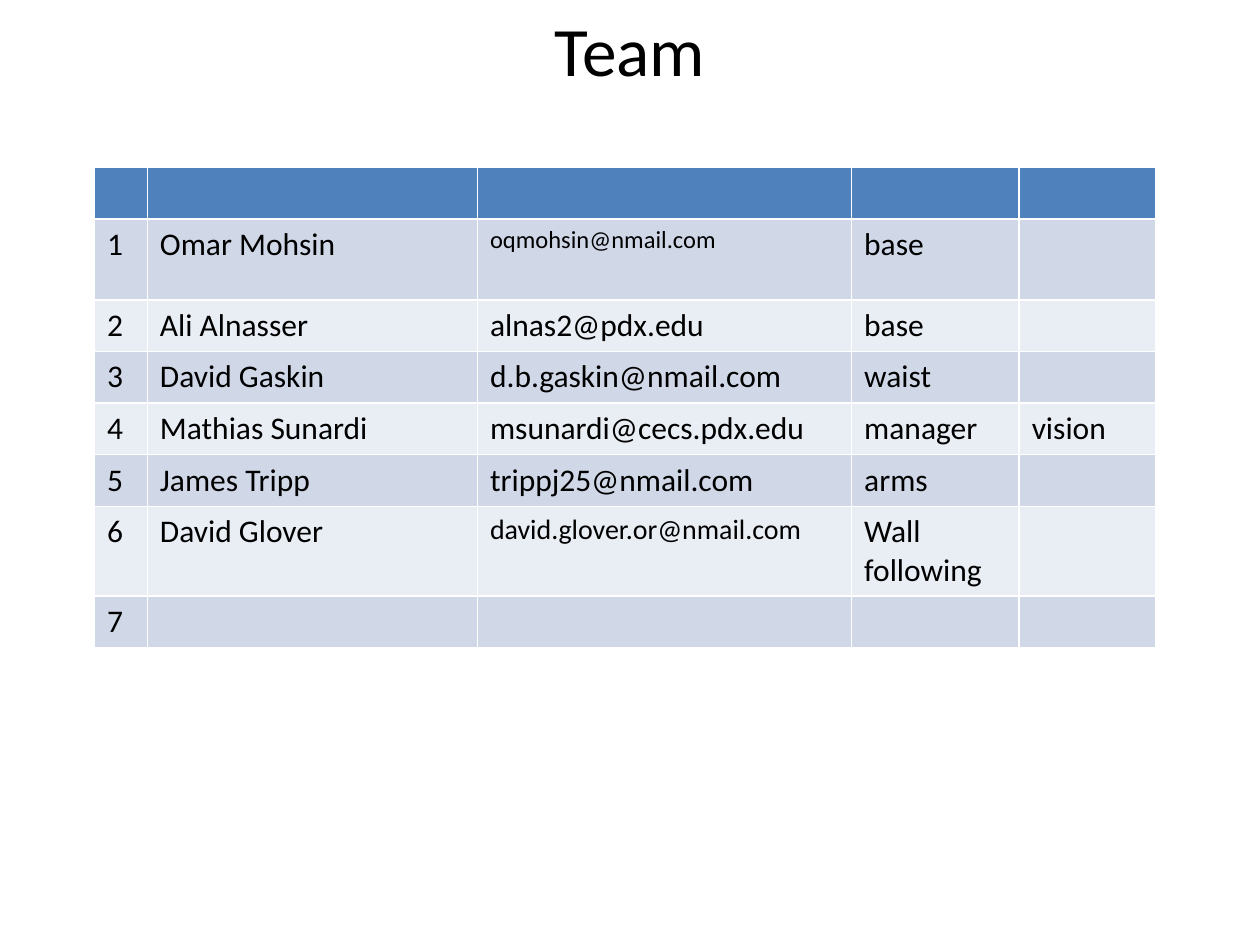
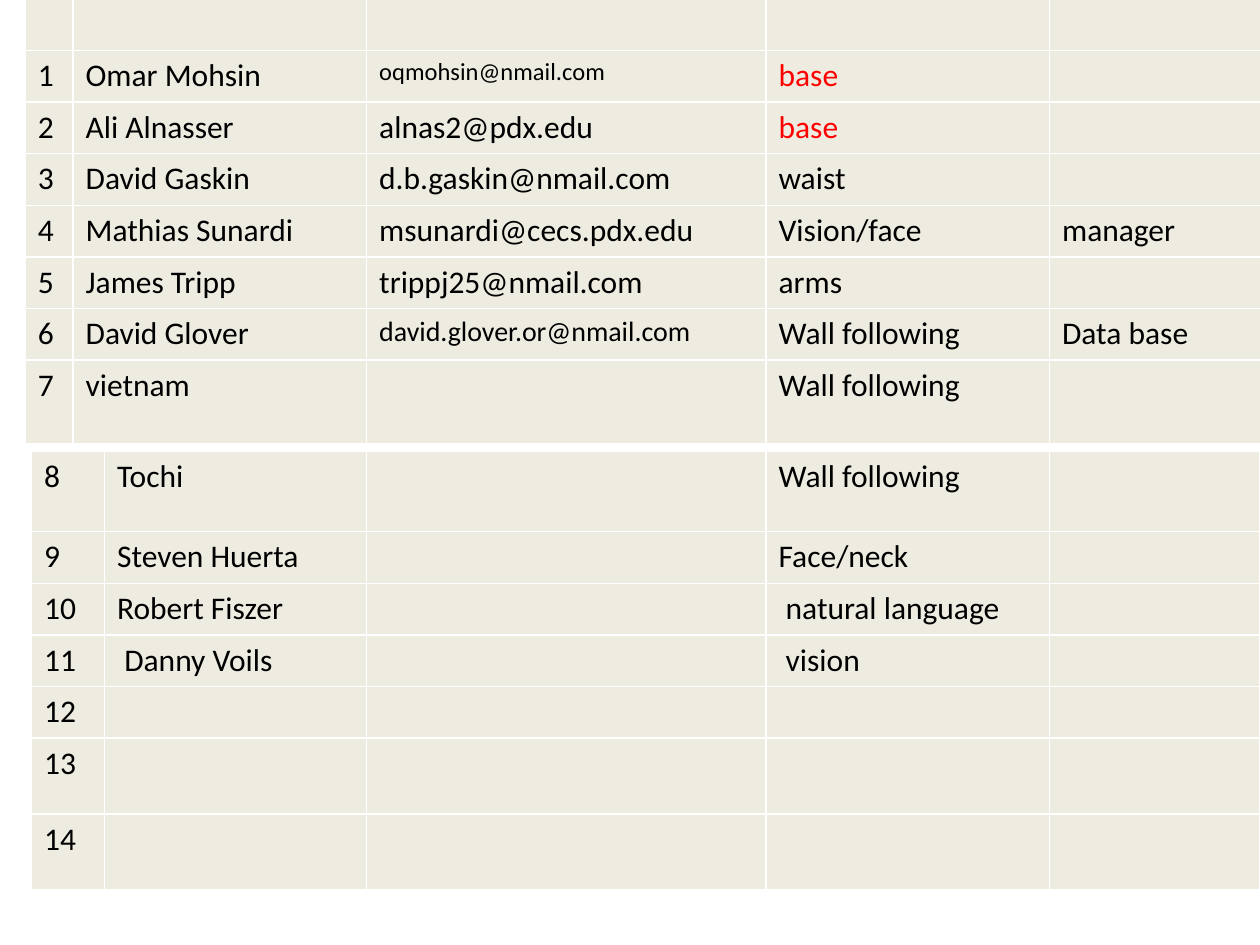
from pptx import Presentation
from pptx.dml.color import RGBColor
from pptx.enum.text import MSO_ANCHOR, PP_ALIGN
from pptx.oxml.ns import qn
from pptx.util import Inches, Pt
from lxml import etree

MIDDLE, CENTER = MSO_ANCHOR.MIDDLE, PP_ALIGN.CENTER
FONT = "Calibri"
BODY_SIZE = 18
BORDER_WIDTH = Pt(1)
COLORS = {
    "text": "000000", "accent": "FF0000", "border": "FFFFFF", "header": "4F81BD",
    "band_dark": "D0D8E8", "band_light": "E9EDF4", "sand": "EEECE1",
}
BLUE_FILLS = ["header"] + ["band_dark", "band_light"] * 3 + ["band_dark"]
EMAILS = {
    "omar": "oqmohsin@nmail.com",
    "ali": "alnas2@pdx.edu",
    "gaskin": "d.b.gaskin@nmail.com",
    "mathias": "msunardi@cecs.pdx.edu",
    "james": "trippj25@nmail.com",
    "glover": "david.glover.or@nmail.com",
}
EMAIL_SIZES = {EMAILS["omar"]: 14, EMAILS["glover"]: 16}
MEMBERS = [
    ("Omar Mohsin", EMAILS["omar"]),
    ("Ali Alnasser", EMAILS["ali"]),
    ("David Gaskin", EMAILS["gaskin"]),
    ("Mathias Sunardi", EMAILS["mathias"]),
    ("James Tripp", EMAILS["james"]),
    ("David Glover", EMAILS["glover"]),
]
FIRST_ROLES = [
    ("base", ""), ("base", ""), ("waist", ""), ("manager", "vision"),
    ("arms", ""), ("Wall following", ""), ("", ""),
]
UPDATED_ROLES = [
    ("base", ""), ("base", ""), ("waist", ""), ("Vision/face", "manager"),
    ("arms", ""), ("Wall following", "Data base"), ("Wall following", ""),
]
NEW_MEMBERS = [
    ("Tochi", "", "Wall following", ""),
    ("Steven Huerta", "", "Face/neck", ""),
    ("Robert Fiszer", "", " natural language", ""),
    (" Danny Voils", "", " vision", ""),
] + [("",) * 4] * 3


def rgb(name):
    """Return the named colour."""
    return RGBColor.from_string(COLORS[name])


def add_run(p, text, size, color="text"):
    """Add one styled run to a paragraph."""
    r = p.add_run()
    r.text = text
    r.font.name, r.font.size, r.font.bold = FONT, Pt(size), False
    r.font.color.rgb = rgb(color)


def add_title(s, text, x, y, w, h):
    """Add a centred slide title in the given box."""
    tf = s.shapes.add_textbox(Inches(x), Inches(y), Inches(w), Inches(h)).text_frame
    tf.word_wrap = True
    tf.vertical_anchor = MIDDLE
    p = tf.paragraphs[0]
    p.alignment = CENTER
    add_run(p, text, 39.6)


def style_cell(cell, fill):
    """Give a cell its white borders and its fill."""
    tc_pr = cell._tc.get_or_add_tcPr()
    for side in ("a:lnL", "a:lnR", "a:lnT", "a:lnB"):
        ln = etree.SubElement(tc_pr, qn(side), w=str(BORDER_WIDTH))
        solid = etree.SubElement(ln, qn("a:solidFill"))
        etree.SubElement(solid, qn("a:srgbClr"), val=COLORS["border"])
    cell.fill.solid()
    cell.fill.fore_color.rgb = rgb(fill)


def add_roster(s, x, y, widths, heights, rows, fills, accents=()):
    """Add a team table, with one fill per row and some words in the accent colour."""
    shape = s.shapes.add_table(len(rows), len(widths), Inches(x), Inches(y),
                               Inches(sum(widths)), Inches(sum(heights)))
    table = shape.table
    for column, width in zip(table.columns, widths):
        column.width = Inches(width)
    for row, height, texts, fill in zip(table.rows, heights, rows, fills):
        row.height = Inches(height)
        for cell, text in zip(row.cells, texts):
            style_cell(cell, fill)
            p = cell.text_frame.paragraphs[0]
            p.font.size = Pt(BODY_SIZE)
            if text:
                color = "accent" if text in accents else "text"
                add_run(p, text, EMAIL_SIZES.get(text, BODY_SIZE), color)


def numbered(people, start=1):
    """Put a running number before each row."""
    return [(str(i), *person) for i, person in enumerate(people, start)]


def with_roles(members, roles):
    """Return an empty header row and the numbered members with their roles."""
    people = [member + role for member, role in zip(members, roles)]
    return [("",) * 5] + numbered(people)


def build_team_slide(prs):
    """Build the titled slide with the first team table."""
    s = prs.slides.add_slide(prs.slide_layouts[6])
    add_title(s, "Team", 0.5, 0.08, 9, 0.62)
    add_roster(s, 0.75, 1.33, [0.42, 2.62, 2.97, 1.33, 1.08],
               [0.41, 0.64] + [0.41] * 4 + [0.71, 0.41],
               with_roles(MEMBERS + [("", "")], FIRST_ROLES), BLUE_FILLS)


def build_roles_slide(prs):
    """Build the slide with the two tables of the larger team."""
    s = prs.slides.add_slide(prs.slide_layouts[6])
    rows = with_roles(MEMBERS + [("vietnam", "")], UPDATED_ROLES)
    add_roster(s, 0.2, -0.01, [0.38, 2.33, 3.17, 2.25, 1.7],
               [0.41] * 7 + [0.66], rows, ["sand"] * len(rows), ("base",))
    rows = numbered(NEW_MEMBERS, 8)
    add_roster(s, 0.25, 3.58, [0.58, 2.08, 3.17, 2.25, 1.67],
               [0.64] + [0.41] * 4 + [0.6] * 2, rows, ["sand"] * len(rows))


def main():
    """Build and save the presentation."""
    prs = Presentation()
    prs.slide_width, prs.slide_height = Inches(10), Inches(7.5)
    build_team_slide(prs)
    build_roles_slide(prs)
    prs.save("out.pptx")


if __name__ == "__main__":
    main()
